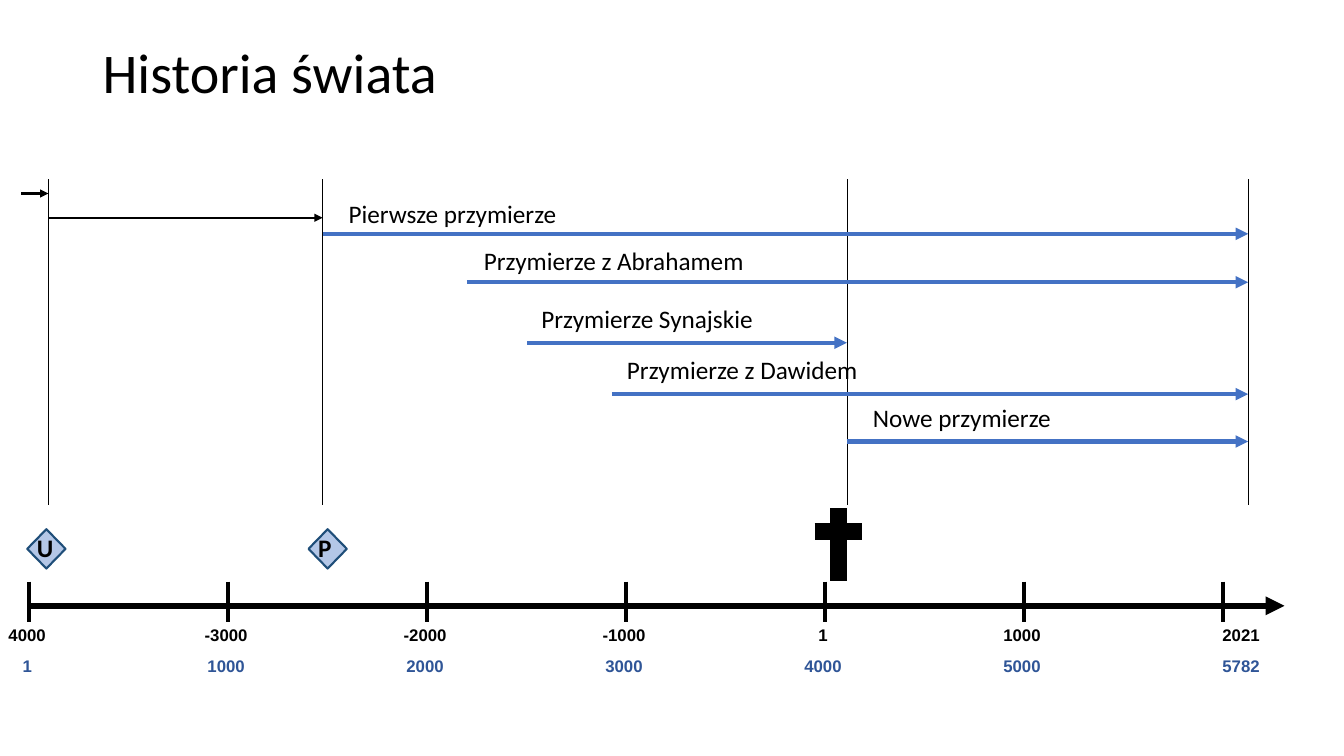
from collections import namedtuple

from lxml import etree
from pptx import Presentation
from pptx import util as u
from pptx.dml.color import RGBColor
from pptx.enum import shapes, text
from pptx.oxml.ns import qn

COLORS = {
    "ink": "000000",
    "covenant": "4472C4",
    "world_year": "2F5597",
    "marker": "B4C7E7",
    "marker_edge": "1F4E79",
}
Box = namedtuple("Box", "left top width height")

TITLE = Box(0.92, 0.4, 11.5, 0.78)
COVENANTS = Box(0.48, 1.78, 11.9, 3.23)
MARKERS = Box(0.27, 5.04, 8.28, 0.72)
AXIS = Box(0.29, 5.77, 11.84, 0.4)

# Distances from the left edge of the covenant chart
CREATION, FLOOD, CROSS, TODAY = 0, 2.72, 7.92, 11.9

ERAS = [(-0.27, CREATION, 0.14), (CREATION, FLOOD, 0.38)]  # start, end, y

# name, start, end, y, label indent, label rise, label width
COVENANT_ROWS = [
    ("Pierwsze przymierze", FLOOD, TODAY, 0.54, 0.16, 0.4, 2.28),
    ("Przymierze z Abrahamem", 4.15, TODAY, 1.02, 0.07, 0.42, 2.81),
    ("Przymierze Synajskie", 4.75, CROSS, 1.62, 0.04, 0.44, 2.32),
    ("Przymierze z Dawidem", 5.59, TODAY, 2.13, 0.05, 0.44, 2.52),
    ("Nowe przymierze", CROSS, TODAY, 2.6, 0.16, 0.44, 1.99),
]

CALENDAR_YEARS = ["4000", "-3000", "-2000", "-1000", "1", "1000", "2021"]
WORLD_YEARS = ["1", "1000", "2000", "3000", "4000", "5000", "5782"]


def rgb(name):
    return RGBColor.from_string(COLORS[name])


def add_line(page, start, end, color, width, arrow=False):
    line = page.shapes.add_connector(
        shapes.MSO_CONNECTOR.STRAIGHT, *[u.Inches(n) for n in (*start, *end)])
    line.line.color.rgb = rgb(color)
    line.line.width = u.Pt(width)
    if arrow:
        tail = etree.SubElement(line.line._get_or_add_ln(), qn("a:tailEnd"))
        tail.set("type", "triangle")
    etree.SubElement(line._element.spPr, qn("a:effectLst"))


def write(shape, words, size, color="ink", font="Calibri", bold=False,
          align=text.PP_ALIGN.LEFT):
    """Put one formatted run into the shape and return its text frame."""
    frame = shape.text_frame
    frame.vertical_anchor = text.MSO_ANCHOR.MIDDLE
    para = frame.paragraphs[0]
    para.alignment = align
    span = para.add_run()
    span.text = words
    span.font.size = u.Pt(size)
    span.font.name = font
    span.font.bold = bold
    span.font.color.rgb = rgb(color)
    return frame


def add_text(page, box, words, size, **style):
    shape = page.shapes.add_textbox(*[u.Inches(n) for n in box])
    frame = write(shape, words, size, **style)
    frame.word_wrap = False
    frame.auto_size = text.MSO_AUTO_SIZE.SHAPE_TO_FIT_TEXT
    return frame


def add_title(page, box):
    frame = add_text(page, box, "Historia świata", 40)
    frame.word_wrap = True
    frame.auto_size = text.MSO_AUTO_SIZE.NONE
    frame.vertical_anchor = text.MSO_ANCHOR.TOP
    frame.paragraphs[0].line_spacing = 0.9


def add_covenants(page, box):
    for event in (CREATION, FLOOD, CROSS, TODAY):
        x = box.left + event
        add_line(page, (x, box.top), (x, box.top + box.height), "ink", 0.5)
    for start, end, drop in ERAS:
        y = box.top + drop
        add_line(page, (box.left + start, y), (box.left + end, y),
                 "ink", 1.5, arrow=True)
    for name, start, end, drop, indent, rise, width in COVENANT_ROWS:
        x, y = box.left + start, box.top + drop
        add_line(page, (x, y), (box.left + end, y), "covenant", 3, arrow=True)
        label = Box(x + indent, y - rise, width, 0.4)
        add_text(page, label, name, 18)


def add_markers(page, box):
    for letter, offset in (("U", 0), ("P", 2.79)):
        place = Box(box.left + offset, box.top + 0.21, 0.38, 0.39)
        diamond = page.shapes.add_shape(
            shapes.MSO_SHAPE.DIAMOND, *[u.Inches(n) for n in place])
        diamond.shadow.inherit = False
        diamond.fill.solid()
        diamond.fill.fore_color.rgb = rgb("marker")
        diamond.line.color.rgb = rgb("marker_edge")
        diamond.line.width = u.Pt(1.5)
        frame = write(diamond, letter, 18, bold=True)
        frame.margin_left = frame.margin_right = 0
        frame.margin_top = frame.margin_bottom = u.Inches(0.04)
        frame.paragraphs[0].line_spacing = 0.9

    right, bottom, arm = box.left + box.width, box.top + box.height, 0.235
    beam = box.top + 0.23
    add_line(page, (right - 2 * arm, beam), (right, beam), "ink", 12)
    add_line(page, (right - arm, bottom), (right - arm, box.top), "ink", 12)


def add_axis(page, box):
    y = box.top + 0.24
    bottom = box.top + box.height
    pitch = box.width / (len(CALENDAR_YEARS) - 1)
    add_line(page, (box.left, y), (box.left + box.width + 0.61, y),
             "ink", 4.5, arrow=True)
    for column, years in enumerate(zip(CALENDAR_YEARS, WORLD_YEARS)):
        x = box.left + column * pitch
        add_line(page, (x, box.top), (x, bottom), "ink", 3)
        is_last = column == len(CALENDAR_YEARS) - 1
        center = x + (0.18 if is_last else -0.02)
        for row, (year, color) in enumerate(zip(years, ("ink", "world_year"))):
            width = 0.06 + 0.1 * len(year)
            label = Box(center - width / 2, bottom + row * 0.31, width, 0.26)
            frame = add_text(page, label, year, 12, color=color, font="Arial",
                             bold=True, align=text.PP_ALIGN.CENTER)
            frame.margin_left = frame.margin_right = u.Inches(0.03)
            frame.margin_top = frame.margin_bottom = u.Inches(0.03)


def main():
    deck = Presentation()
    deck.slide_width, deck.slide_height = u.Inches(13.33), u.Inches(7.5)
    page = deck.slides.add_slide(deck.slide_layouts[6])
    add_title(page, TITLE)
    add_axis(page, AXIS)
    add_markers(page, MARKERS)
    add_covenants(page, COVENANTS)
    deck.save("out.pptx")


if __name__ == "__main__":
    main()
